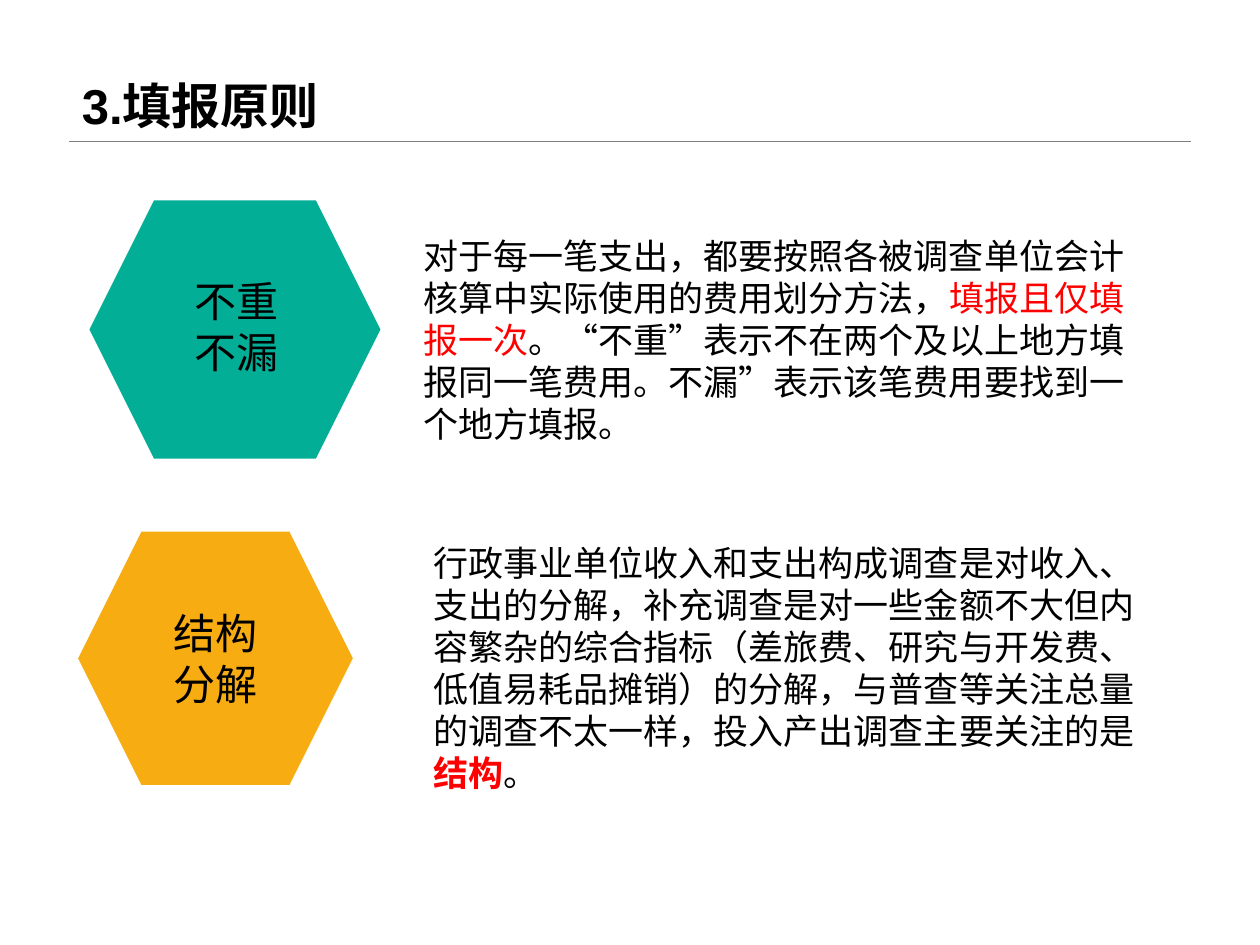
from lxml import etree
from pptx import Presentation
from pptx.dml.color import RGBColor
from pptx.enum.shapes import MSO_CONNECTOR, MSO_SHAPE
from pptx.enum.text import MSO_ANCHOR, MSO_AUTO_SIZE, PP_ALIGN
from pptx.oxml.ns import qn
from pptx.util import Inches, Pt

HEXAGON, STRAIGHT = MSO_SHAPE.HEXAGON, MSO_CONNECTOR.STRAIGHT
TOP, MIDDLE, BOTTOM = MSO_ANCHOR.TOP, MSO_ANCHOR.MIDDLE, MSO_ANCHOR.BOTTOM
LEFT, CENTER = PP_ALIGN.LEFT, PP_ALIGN.CENTER
NO_FIT = MSO_AUTO_SIZE.NONE
CJK = "Noto Sans CJK SC"
BLACK, RED, GRAY = "000000", "FF0000", "808080"
TEAL, AMBER = "03AE97", "F7AC12"
TITLE_ONLY = 5


def color(hex_value):
    return RGBColor.from_string(hex_value)


def set_all(target, values):
    for name, value in values.items():
        setattr(target, name, value)


class PrincipleSlide:
    """Holds the text style and the slide being built."""

    title_font = {"name": "Arial", "size": Pt(28)}
    label_font = {"name": CJK, "size": Pt(24)}
    body_font = {"name": CJK, "size": Pt(20)}

    def __init__(self, presentation):
        self.slide = presentation.slides.add_slide(
            presentation.slide_layouts[TITLE_ONLY])

    def fill_text(self, frame, paragraphs, font, align=LEFT, anchor=TOP, wrap=True):
        """Fill a frame; each paragraph is a list of (text, colour, bold) runs."""
        set_all(frame, {"word_wrap": wrap, "auto_size": NO_FIT,
                        "vertical_anchor": anchor})
        for index, runs in enumerate(paragraphs):
            paragraph = frame.add_paragraph() if index else frame.paragraphs[0]
            paragraph.alignment = align
            for text, hex_value, bold in runs:
                run = paragraph.add_run()
                run.text = text
                set_all(run.font, {**font, "bold": bold})
                run.font.color.rgb = color(hex_value)
                east_asian = etree.SubElement(run.font._element, qn("a:ea"))
                east_asian.set("typeface", CJK)

    def title(self, text, left, top, width, height):
        heading = self.slide.shapes.title
        set_all(heading, {"left": Inches(left), "top": Inches(top),
                          "width": Inches(width), "height": Inches(height)})
        self.fill_text(heading.text_frame, [[(text, BLACK, True)]],
                       self.title_font, anchor=BOTTOM)
        heading.text_frame.paragraphs[0].line_spacing = 0.9

    def rule(self, left, right, y):
        divider = self.slide.shapes.add_connector(
            STRAIGHT, Inches(left), Inches(y), Inches(right), Inches(y))
        divider.line.color.rgb = color(GRAY)
        divider.line.width = Pt(0.25)
        etree.SubElement(divider._element.spPr, qn("a:effectLst"))

    def hexagon(self, fill, *box):
        badge = self.slide.shapes.add_shape(HEXAGON, *map(Inches, box))
        badge.shadow.inherit = False
        badge.adjustments[0] = 0.25
        badge.fill.solid()
        badge.fill.fore_color.rgb = color(fill)
        badge.line.fill.background()
        return badge

    def label(self, frame, lines, font=CJK, anchor=TOP, wrap=True):
        self.fill_text(frame, [[(line, BLACK, False)] for line in lines],
                       {**self.label_font, "name": font}, CENTER, anchor, wrap)

    def text_box(self, *box):
        return self.slide.shapes.add_textbox(*map(Inches, box)).text_frame

    def explanation(self, runs, *box):
        self.fill_text(self.text_box(*box), [runs], self.body_font)


def main():
    presentation = Presentation()
    set_all(presentation, {"slide_width": Inches(10), "slide_height": Inches(7.5)})
    page = PrincipleSlide(presentation)

    page.title("3.填报原则", 0.55, 0, 8.9, 1.12)
    page.rule(0.55, 9.45, 1.12)

    page.hexagon(TEAL, 0.71, 1.59, 2.31, 2.05)
    page.label(page.text_box(1.44, 2.14, 0.88, 0.91), ["不重", "不漏"],
               font="Calibri", wrap=False)
    page.explanation([
        ("对于每一笔支出，都要按照各被调查单位会计核算中实际使用的费用划分方法，",
         BLACK, False),
        ("填报且仅填报一次", RED, False),
        ("。“不重”表示不在两个及以上地方填报同一笔费用。"
         "不漏”表示该笔费用要找到一个地方填报。", BLACK, False),
    ], 3.26, 1.81, 6.01, 1.78)

    structure = page.hexagon(AMBER, 0.62, 4.22, 2.18, 2.01)
    page.label(structure.text_frame, ["结构", "分解"], anchor=MIDDLE)
    page.explanation([
        ("行政事业单位收入和支出构成调查是对收入、支出的分解，"
         "补充调查是对一些金额不大但内容繁杂的综合指标"
         "（差旅费、研究与开发费、低值易耗品摊销）的分解，"
         "与普查等关注总量的调查不太一样，投入产出调查主要关注的是", BLACK, False),
        ("结构", RED, True),
        ("。", BLACK, False),
    ], 3.34, 4.25, 5.93, 2.12)

    presentation.save("out.pptx")


if __name__ == "__main__":
    main()
